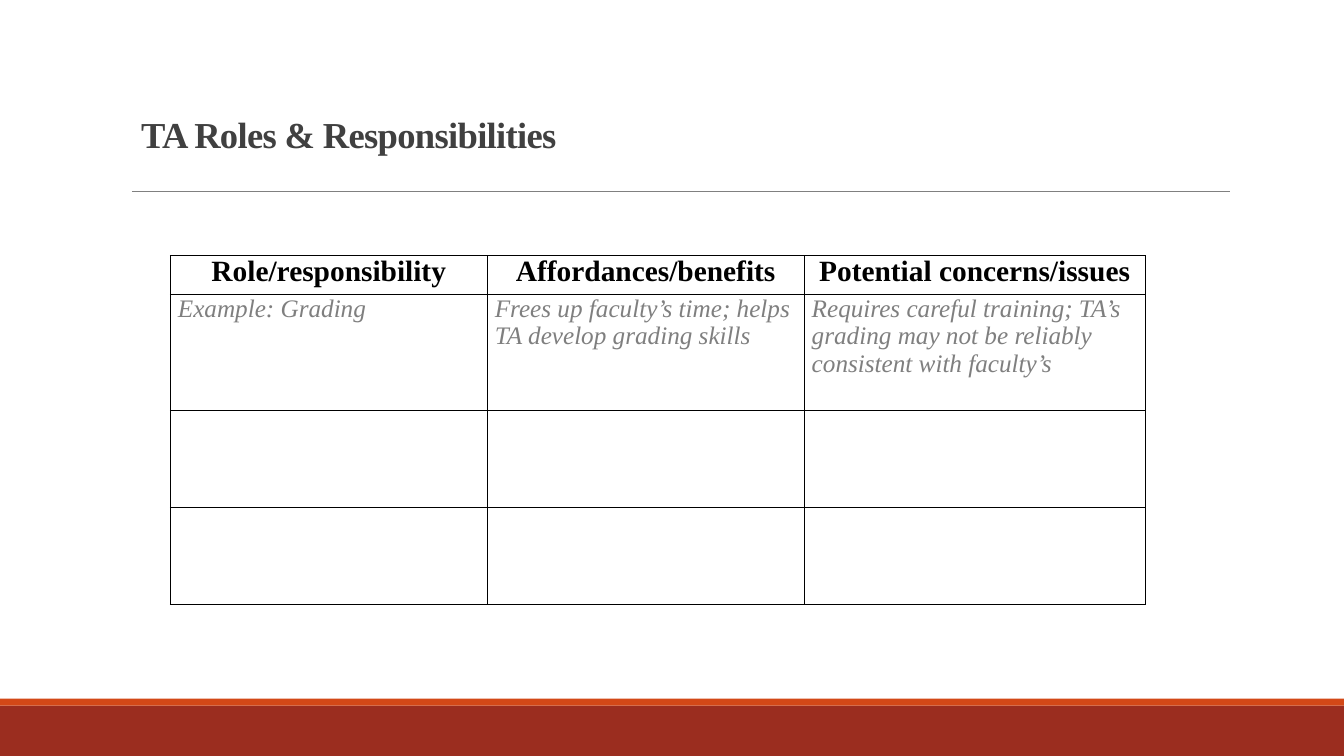
import pptx
import pptx.util
import pptx.dml.color
import pptx.enum.shapes
import pptx.enum.text
import pptx.oxml
from dataclasses import dataclass

Pt = pptx.util.Pt
RGB = pptx.dml.color.RGBColor.from_string
ALIGN = pptx.enum.text.PP_ALIGN
ANCHOR = pptx.enum.text.MSO_ANCHOR

TITLE = "TA Roles & Responsibilities"
ROLES = [
    ("Role/responsibility", "Affordances/benefits", "Potential concerns/issues"),
    (
        "Example: Grading",
        "Frees up faculty’s time; helps TA develop grading skills",
        "Requires careful training; TA’s grading may not be reliably consistent with faculty’s",
    ),
    ("", "", ""),
    ("", "", ""),
]
COLUMN_WIDTHS = (226.4, 226.4, 243.6)
ROW_HEIGHTS = (27.8, 83, 69.2, 69.2)
SLIDE_WIDTH, SLIDE_HEIGHT = 960, 540


@dataclass(frozen=True)
class Theme:
    font: str = "Times New Roman"
    title: str = "404040"
    heading: str = "000000"
    example: str = "7F7F7F"
    border: str = "000000"
    rule: str = "808080"
    footer: str = "9B2D1F"
    accent: str = "D34817"
    title_size: float = 26.1
    heading_size: float = 21
    example_size: float = 18


THEME = Theme()


def style(paragraph, size, color, bold=False, italic=False):
    for run in paragraph.runs:
        run.font.name = THEME.font
        run.font.size = Pt(size)
        run.font.color.rgb = RGB(color)
        run.font.bold = bold
        run.font.italic = italic


def add_band(slide, top, height, color):
    band = slide.shapes.add_shape(
        pptx.enum.shapes.MSO_SHAPE.RECTANGLE, 0, Pt(top), Pt(SLIDE_WIDTH), Pt(height)
    )
    band.shadow.inherit = False
    band.fill.solid()
    band.fill.fore_color.rgb = RGB(color)
    band.line.fill.background()


def add_rule(slide, left, right, y):
    rule = slide.shapes.add_connector(
        pptx.enum.shapes.MSO_CONNECTOR.STRAIGHT, Pt(left), Pt(y), Pt(right), Pt(y)
    )
    rule.line.color.rgb = RGB(THEME.rule)
    rule.line.width = Pt(0.5)
    rule._element.spPr.append(pptx.oxml.parse_xml(
        '<a:effectLst xmlns:a="http://schemas.openxmlformats.org/drawingml/2006/main"/>'
    ))


def add_title(slide):
    title = slide.shapes.title
    title.left, title.top, title.width, title.height = Pt(93.6), Pt(73), Pt(828), Pt(50)
    title.text_frame.text = TITLE
    title.text_frame.vertical_anchor = ANCHOR.MIDDLE
    heading = title.text_frame.paragraphs[0]
    heading.alignment = ALIGN.LEFT
    heading.line_spacing = 0.85
    style(heading, THEME.title_size, THEME.title, bold=True)
    heading.runs[0].font._element.set("spc", "-50")


def border_cell(cell):
    properties = cell._tc.get_or_add_tcPr()
    for side in "LRTB":
        properties.append(pptx.oxml.parse_xml(
            f'<a:ln{side} xmlns:a="http://schemas.openxmlformats.org/drawingml/2006/main"'
            f' w="{Pt(1)}"><a:solidFill><a:srgbClr val="{THEME.border}"/></a:solidFill>'
            f'</a:ln{side}>'
        ))


def add_roles(slide):
    roles = slide.shapes.add_table(
        len(ROLES), len(COLUMN_WIDTHS), Pt(121.7), Pt(182.6),
        Pt(sum(COLUMN_WIDTHS)), Pt(sum(ROW_HEIGHTS))
    ).table
    roles.horz_banding = False
    roles.first_row = False
    for column, width in zip(roles.columns, COLUMN_WIDTHS):
        column.width = Pt(width)
    for row, height in zip(roles.rows, ROW_HEIGHTS):
        row.height = Pt(height)
    for r, entries in enumerate(ROLES):
        for c, entry in enumerate(entries):
            cell = roles.cell(r, c)
            cell.margin_left = cell.margin_right = Pt(5.4)
            cell.margin_top = cell.margin_bottom = 0
            border_cell(cell)
            cell.fill.background()
            cell.text_frame.text = entry
            paragraph = cell.text_frame.paragraphs[0]
            if r == 0:
                paragraph.alignment = ALIGN.CENTER
                style(paragraph, THEME.heading_size, THEME.heading, bold=True)
            else:
                style(paragraph, THEME.example_size, THEME.example, italic=True)


def main():
    deck = pptx.Presentation()
    deck.slide_width, deck.slide_height = Pt(SLIDE_WIDTH), Pt(SLIDE_HEIGHT)
    slide = deck.slides.add_slide(deck.slide_layouts[5])
    add_band(slide, 504, 36, THEME.footer)
    add_band(slide, 499, 5, THEME.accent)
    add_rule(slide, 94.3, 878.6, 136.6)
    add_title(slide)
    add_roles(slide)
    deck.save("out.pptx")


if __name__ == "__main__":
    main()
